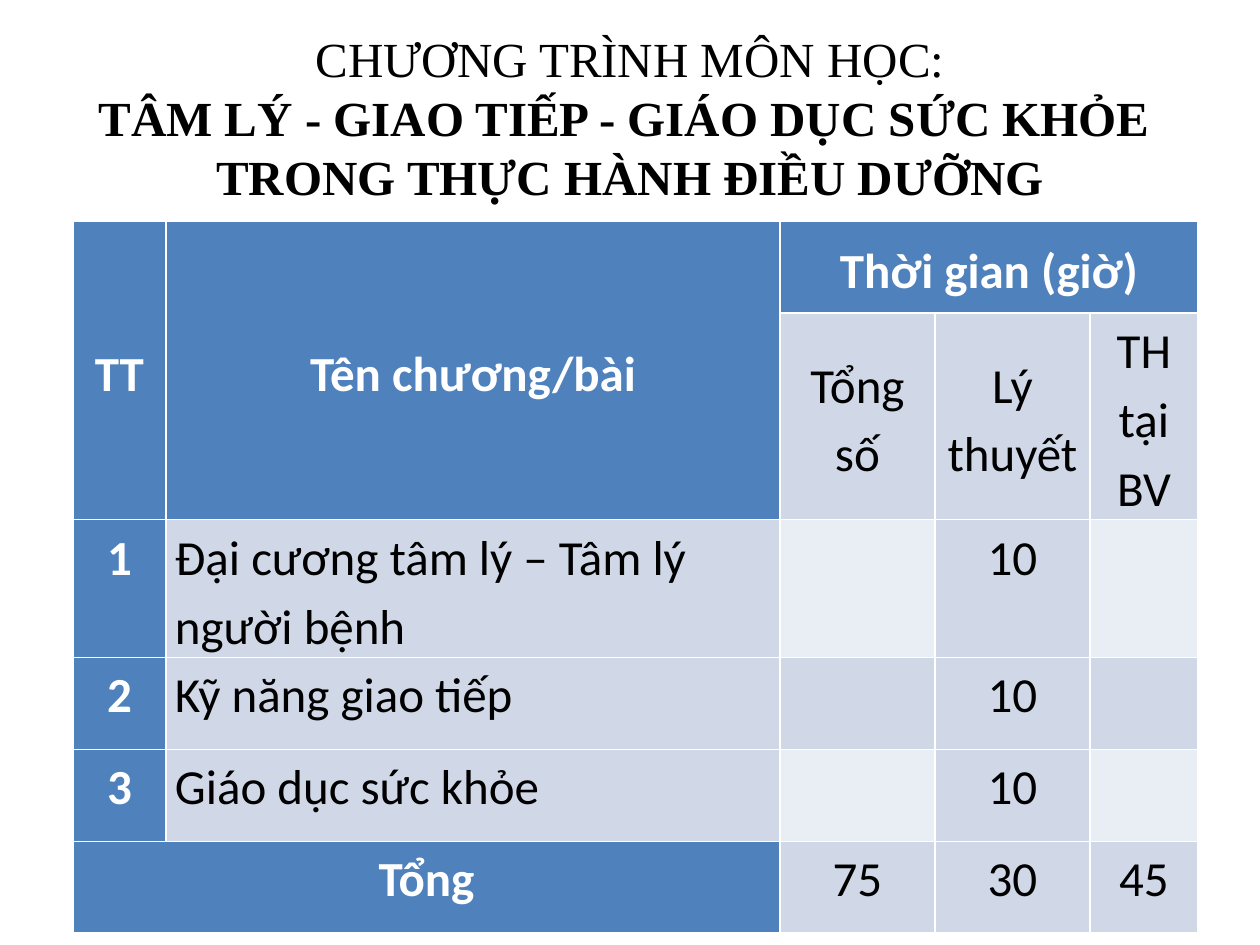
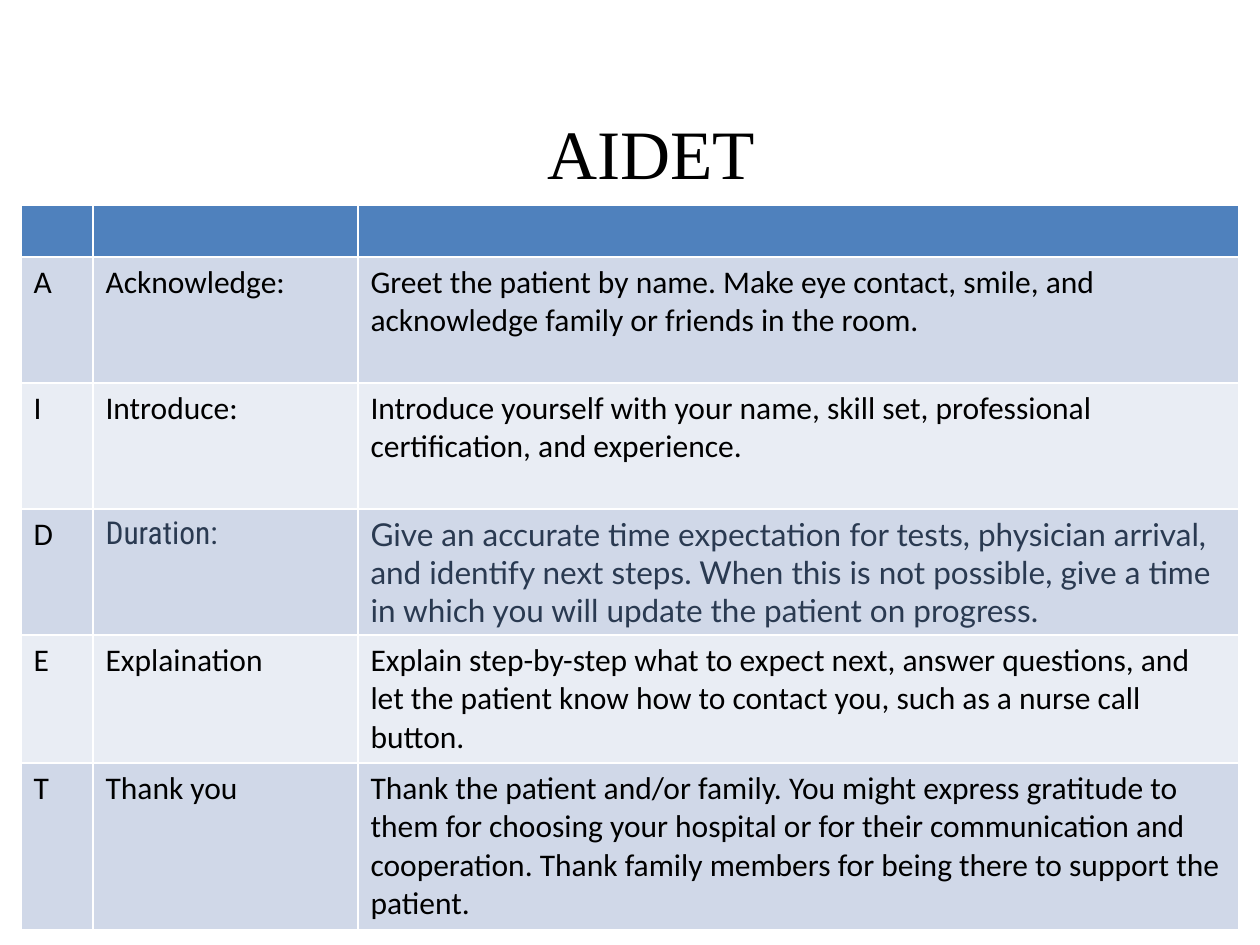
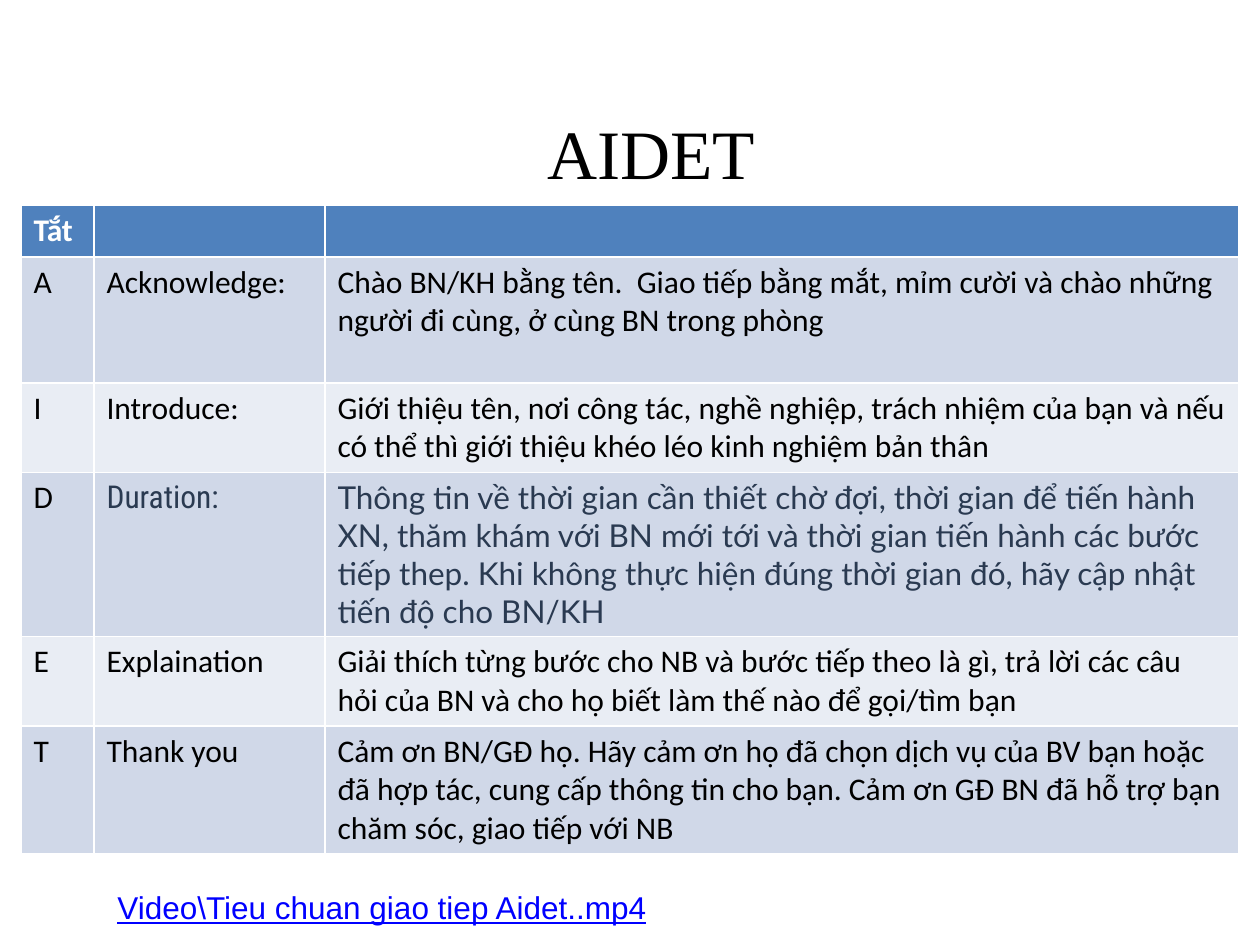
from copy import deepcopy
from dataclasses import dataclass

from pptx import Presentation
from pptx.dml.color import RGBColor
from pptx.enum.text import MSO_ANCHOR, MSO_AUTO_SIZE, PP_ALIGN
from pptx.oxml.ns import qn
from pptx.util import Emu, Pt

PX_PER_INCH = 126
TITLE_ONLY_LAYOUT = 5


def px(length):
    return Emu(round(length * 914400 / PX_PER_INCH))


@dataclass(frozen=True)
class Theme:
    header: RGBColor = RGBColor(0x4F, 0x81, 0xBD)
    band: RGBColor = RGBColor(0xD0, 0xD8, 0xE8)
    light_band: RGBColor = RGBColor(0xE9, 0xED, 0xF4)
    white: RGBColor = RGBColor(0xFF, 0xFF, 0xFF)
    black: RGBColor = RGBColor(0x00, 0x00, 0x00)
    slate: RGBColor = RGBColor(0x2A, 0x3A, 0x51)
    link: RGBColor = RGBColor(0x00, 0x00, 0xFF)
    title_font: str = "Times New Roman"
    table_font: str = "Calibri"
    link_font: str = "Arial"
    course_size: Pt = Pt(28)
    acronym_size: Pt = Pt(39.6)
    text_size: Pt = Pt(18)


THEME = Theme()

COURSE_TITLE = [
    ("CHƯƠNG TRÌNH MÔN HỌC:", False),
    ("TÂM LÝ - GIAO TIẾP - GIÁO DỤC SỨC KHỎE ", True),
    ("TRONG THỰC HÀNH ĐIỀU DƯỠNG", True),
]
COURSE_ROWS = [
    ("TT", "Tên chương/bài", "Thời gian (giờ)", "", ""),
    ("", "", "Tổng số", "Lý thuyết", "TH tại BV"),
    ("1", "Đại cương tâm lý – Tâm lý người bệnh", "", "10", ""),
    ("2", "Kỹ năng giao tiếp", "", "10", ""),
    ("3", "Giáo dục sức khỏe", "", "10", ""),
    ("Tổng", "", "75", "30", "45"),
]
COURSE_MERGES = [((0, 0), (1, 0)), ((0, 1), (1, 1)), ((0, 2), (0, 4)), ((5, 0), (5, 1))]

AIDET_STEPS = ["Acknowledge:", "Introduce:", "Duration:", "Explaination", "Thank you"]
DURATION_ROW = 3
ENGLISH_DETAILS = [
    "Greet the patient by name. Make eye contact, smile, and acknowledge family or "
    "friends in the room.",
    "Introduce yourself with your name, skill set, professional certification, and "
    "experience.",
    "Give an accurate time expectation for tests, physician arrival, and identify next "
    "steps. When this is not possible, give a time in which you will update the patient "
    "on progress.",
    "Explain step-by-step what to expect next, answer questions, and let the patient "
    "know how to contact you, such as a nurse call button.",
    "Thank the patient and/or family. You might express gratitude to them for choosing "
    "your hospital or for their communication and cooperation. Thank family members for "
    "being there to support the patient.",
]
VIETNAMESE_DETAILS = [
    "Chào BN/KH bằng tên.  Giao tiếp bằng mắt, mỉm cười và chào những người đi cùng, ở "
    "cùng BN trong phòng",
    "Giới thiệu tên, nơi công tác, nghề nghiệp, trách nhiệm của bạn và nếu có thể thì "
    "giới thiệu khéo léo kinh nghiệm bản thân",
    "Thông tin về thời gian cần thiết chờ đợi, thời gian để tiến hành XN, thăm khám với "
    "BN mới tới và thời gian tiến hành các bước tiếp thep. Khi không thực hiện đúng thời "
    "gian đó, hãy cập nhật tiến độ cho BN/KH",
    "Giải thích từng bước cho NB và bước tiếp theo là gì, trả lời các câu hỏi của BN và "
    "cho họ biết làm thế nào để gọi/tìm bạn",
    "Cảm ơn BN/GĐ họ. Hãy cảm ơn họ đã chọn dịch vụ của BV bạn hoặc đã hợp tác, cung cấp "
    "thông tin cho bạn. Cảm ơn GĐ BN đã hỗ trợ bạn chăm sóc, giao tiếp với NB",
]


def set_attributes(target, values):
    for name, value in values.items():
        setattr(target, name, value)


def add_run(paragraph, text, color, **font_values):
    run = paragraph.add_run()
    run.text = text
    set_attributes(run.font, font_values)
    run.font.color.rgb = color
    return run


def add_titled_slide(presentation, lines, size, box):
    """Add a slide whose title holds (text, bold) lines in one paragraph."""
    slide = presentation.slides.add_slide(presentation.slide_layouts[TITLE_ONLY_LAYOUT])
    title = slide.shapes.title
    set_attributes(title, dict(zip(("left", "top", "width", "height"), map(px, box))))
    set_attributes(title.text_frame, {
        "auto_size": MSO_AUTO_SIZE.NONE,
        "vertical_anchor": MSO_ANCHOR.MIDDLE,
        "word_wrap": True,
    })
    paragraph = title.text_frame.paragraphs[0]
    paragraph.alignment = PP_ALIGN.CENTER
    for index, (text, bold) in enumerate(lines):
        if index:
            paragraph.add_line_break()
        run = add_run(paragraph, text, THEME.black, name=THEME.title_font, size=size, bold=bold)
    # Line breaks need the title's size too, or they stretch their lines.
    for line_break in paragraph._p.findall(qn("a:br")):
        line_break.append(deepcopy(run.font._element))
    return slide


def add_table(slide, left, top, column_widths, row_heights):
    frame = slide.shapes.add_table(
        len(row_heights), len(column_widths), px(left), px(top),
        px(sum(column_widths)), px(sum(row_heights)))
    for column, width in zip(frame.table.columns, column_widths):
        column.width = px(width)
    for row, height in zip(frame.table.rows, row_heights):
        row.height = px(height)
    return frame.table


def fill_cell(cell, text, fill, color, **font_values):
    cell.fill.solid()
    cell.fill.fore_color.rgb = fill
    if text:
        add_run(cell.text_frame.paragraphs[0], text, color, **font_values)


def add_course_table(slide):
    table = add_table(slide, 73, 221, [93, 614, 155, 155, 108], [92, 190, 92, 92, 92, 92])
    table.first_col = True
    for start, end in COURSE_MERGES:
        table.cell(*start).merge(table.cell(*end))
    for row, texts in enumerate(COURSE_ROWS):
        for column, text in enumerate(texts):
            is_header = row == 0 or column == 0 or (row, column) in [(1, 1), (5, 1)]
            is_light = row in (2, 4) and column in (2, 4)
            cell = table.cell(row, column)
            fill = THEME.header if is_header else THEME.light_band if is_light else THEME.band
            fill_cell(cell, text, fill, THEME.white if is_header else THEME.black,
                      name=THEME.table_font, size=THEME.course_size, bold=is_header)
            if not text:
                continue
            set_attributes(cell, {
                "margin_left": px(9), "margin_right": px(9),
                "margin_top": 0, "margin_bottom": 0,
                "vertical_anchor": MSO_ANCHOR.MIDDLE if row < 2 else MSO_ANCHOR.TOP,
            })
            is_chapter_name = column == 1 and row > 1
            set_attributes(cell.text_frame.paragraphs[0], {
                "alignment": PP_ALIGN.LEFT if is_chapter_name else PP_ALIGN.CENTER,
                "line_spacing": 1.15,
            })


def add_aidet_table(slide, heading, details, column_widths, row_heights):
    table = add_table(slide, 21, 205, column_widths, row_heights)
    rows = [(heading, "", ""), *zip("AIDET", AIDET_STEPS, details)]
    duration_fonts = (THEME.table_font, "Roboto Condensed", "Lato")
    for row, texts in enumerate(rows):
        fill = THEME.header if row == 0 else THEME.band if row % 2 else THEME.light_band
        for column, text in enumerate(texts):
            color = THEME.white if row == 0 else THEME.black
            font_name = THEME.table_font
            if row == DURATION_ROW and column > 0:
                color, font_name = THEME.slate, duration_fonts[column]
            fill_cell(table.cell(row, column), text, fill, color,
                      name=font_name, size=THEME.text_size, bold=row == 0)


def add_aidet_slide(presentation, heading, details, column_widths, row_heights):
    slide = add_titled_slide(presentation, [("AIDET", False)], THEME.acronym_size,
                             (105, 105, 1092, 94))
    add_aidet_table(slide, heading, details, column_widths, row_heights)
    return slide


def add_video_reference(slide, text):
    box = slide.shapes.add_textbox(px(105), px(882), px(966), px(50))
    box.text_frame.word_wrap = True
    add_run(box.text_frame.paragraphs[0], text, THEME.link,
            name=THEME.link_font, size=THEME.text_size, underline=True)


def main():
    presentation = Presentation()
    presentation.slide_width, presentation.slide_height = px(1260), px(945)

    course = add_titled_slide(presentation, COURSE_TITLE, THEME.course_size, (63, 38, 1134, 158))
    add_course_table(course)

    add_aidet_slide(presentation, "", ENGLISH_DETAILS,
                    [72, 265, 881], [52, 126, 126, 126, 126, 164])

    vietnamese = add_aidet_slide(presentation, "Tắt", VIETNAMESE_DETAILS,
                                 [73, 231, 914], [52, 126, 88, 164, 88, 126])
    add_video_reference(vietnamese, "Video\\Tieu chuan giao tiep Aidet..mp4")

    presentation.save("out.pptx")


if __name__ == "__main__":
    main()
